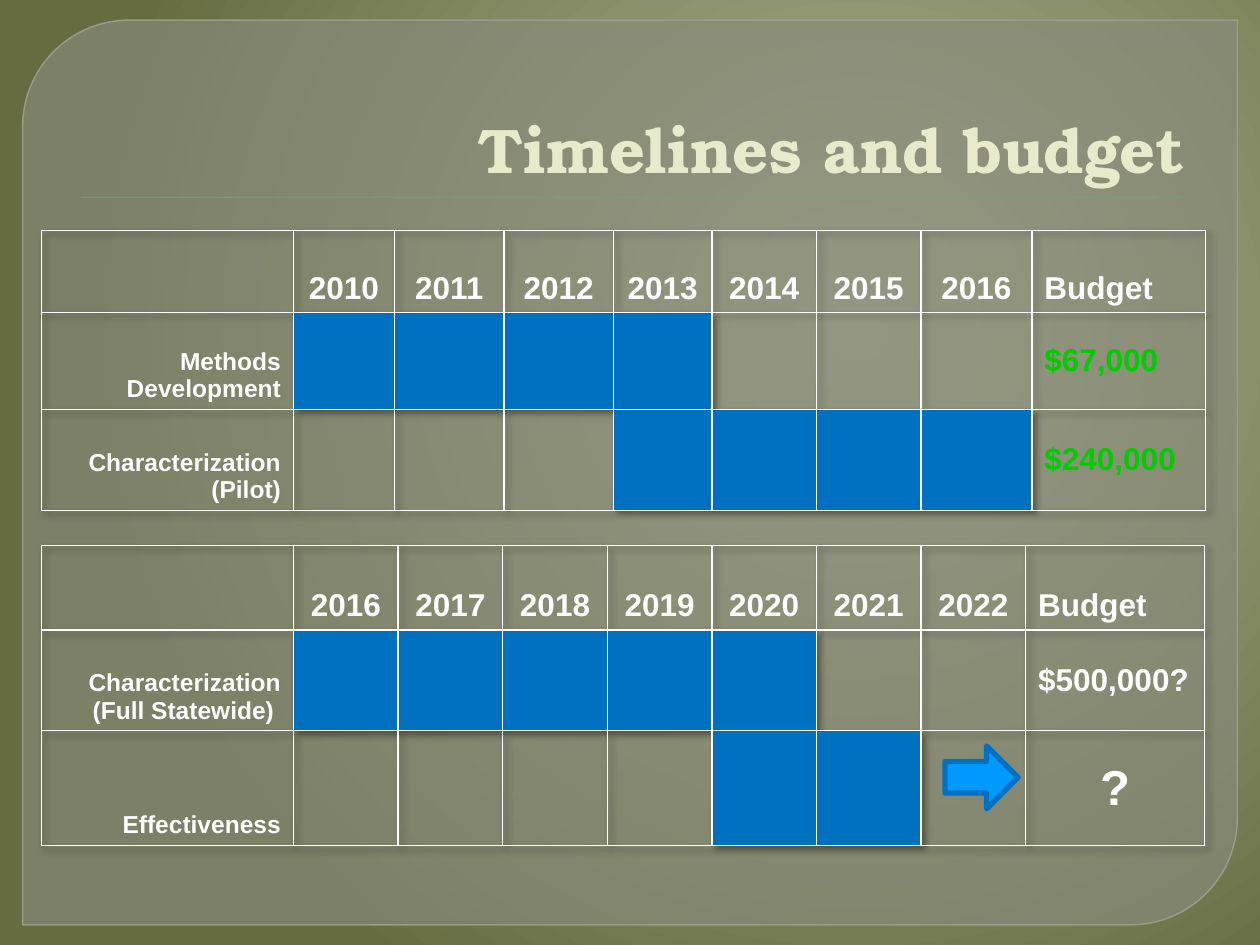
from dataclasses import dataclass

from lxml.etree import SubElement
from pptx import Presentation
from pptx.dml.color import RGBColor
from pptx.enum.shapes import MSO_SHAPE
from pptx.enum.text import MSO_ANCHOR, MSO_AUTO_SIZE, PP_ALIGN
from pptx.oxml import parse_xml
from pptx.oxml.ns import nsdecls, qn
from pptx.shapes.autoshape import Shape
from pptx.slide import Slide
from pptx.table import _Cell
from pptx.util import Inches, Pt


@dataclass(frozen=True)
class Theme:
    glow: tuple[tuple[int, str], ...] = ((0, "A9AE8D"), (20, "9FA583"), (100, "666C40"))
    panel: str = "888B7B"
    panel_line: str = "9DA090"
    rule: str = "72A376"
    title: str = "E7EACB"
    text: str = "FFFFFF"
    funded: str = "00CC00"
    bar: str = "0070C0"
    arrow: str = "0099FF"
    shadow: str = "000000"
    title_font: str = "TeX Gyre Bonum"
    body_font: str = "Arial"
    title_size: int = 36
    body_size: int = 18
    label_size: int = 14
    question_size: int = 28


THEME = Theme()


@dataclass(frozen=True)
class Phase:
    label: str
    start: int
    end: int
    budget: str
    color: str = THEME.text
    size: int = THEME.body_size
    align: PP_ALIGN = PP_ALIGN.LEFT


@dataclass(frozen=True)
class Timeline:
    top: float
    first_year: int
    columns: list[float]
    rows: list[float]
    phases: list[Phase]


TIMELINES = [
    Timeline(
        1.83, 2010,
        [2, 0.8, 0.87, 0.87, 0.78, 0.83, 0.83, 0.88, 1.38],
        [0.65, 0.77, 0.8],
        [
            Phase("Methods Development", 2010, 2013, "$67,000", THEME.funded),
            Phase("Characterization (Pilot)", 2013, 2016, "$240,000", THEME.funded),
        ],
    ),
    Timeline(
        4.33, 2016,
        [2] + [0.83] * 7 + [1.42],
        [0.67, 0.8, 0.91],
        [
            Phase("Characterization (Full Statewide) ", 2016, 2020, "$500,000?"),
            Phase("Effectiveness", 2020, 2021, "?", size=THEME.question_size,
                  align=PP_ALIGN.CENTER),
        ],
    ),
]


def rgb(color: str) -> RGBColor:
    return RGBColor.from_string(color)


def shadow_effect(blur: float, distance: float, angle: int, opacity: int):
    return parse_xml(
        f'<a:effectLst {nsdecls("a")}><a:outerShdw blurRad="{Pt(blur)}" '
        f'dist="{Pt(distance)}" dir="{angle * 60000}" algn="tl" rotWithShape="0">'
        f'<a:srgbClr val="{THEME.shadow}"><a:alpha val="{opacity * 1000}"/></a:srgbClr>'
        f'</a:outerShdw></a:effectLst>'
    )


def paint_background(slide: Slide) -> None:
    stops = "".join(
        f'<a:gs pos="{position * 1000}"><a:srgbClr val="{color}"/></a:gs>'
        for position, color in THEME.glow
    )
    slide.element.cSld.insert(0, parse_xml(
        f'<p:bg {nsdecls("p", "a")}><p:bgPr><a:gradFill rotWithShape="1">'
        f'<a:gsLst>{stops}</a:gsLst><a:path path="circle">'
        f'<a:fillToRect l="68000" t="35000" r="32000" b="65000"/></a:path>'
        f'</a:gradFill><a:effectLst/></p:bgPr></p:bg>'
    ))


def add_block(slide: Slide, kind: MSO_SHAPE, bounds: tuple[float, ...], fill: str,
              line: str | None = None, width: float = 0) -> Shape:
    block = slide.shapes.add_shape(kind, *map(Inches, bounds))
    block.shadow.inherit = False
    block.fill.solid()
    block.fill.fore_color.rgb = rgb(fill)
    if line:
        block.line.color.rgb = rgb(line)
        block.line.width = Pt(width)
    else:
        block.line.fill.background()
    return block


def add_panel(slide: Slide) -> None:
    panel = add_block(slide, MSO_SHAPE.ROUND_2_DIAG_RECTANGLE, (0.18, 0.16, 9.64, 7.18),
                      THEME.panel, THEME.panel_line, 0.87)
    panel.adjustments[0] = 0.118
    panel.adjustments[1] = 0
    colors = panel.element.spPr.iter(qn("a:srgbClr"))
    for color, opacity in zip(list(colors), (65, 88)):
        SubElement(color, qn("a:alpha")).set("val", str(opacity * 1000))

    rule = add_block(slide, MSO_SHAPE.RECTANGLE, (0.64, 1.56, 8.75, 0.01), THEME.rule)
    properties = rule.element.spPr
    properties.replace(properties.find(qn("a:effectLst")), shadow_effect(1, 1, 90, 75))


def place_title(slide: Slide, text: str) -> None:
    title = slide.shapes.title
    title.left, title.top, title.width, title.height = map(Inches, (0.5, 0.28, 9, 1.25))
    frame = title.text_frame
    frame.text = text
    frame.auto_size = MSO_AUTO_SIZE.NONE
    frame.vertical_anchor = MSO_ANCHOR.BOTTOM
    para = frame.paragraphs[0]
    para.alignment = PP_ALIGN.RIGHT
    font = para.runs[0].font
    font.name, font.size, font.bold = THEME.title_font, Pt(THEME.title_size), True
    font.color.rgb = rgb(THEME.title)
    slide.shapes._spTree.append(title.element)


def write_cell(cell: _Cell, text: str, align: PP_ALIGN, size: int = THEME.body_size,
               color: str = THEME.text, anchor: MSO_ANCHOR = MSO_ANCHOR.BOTTOM) -> None:
    cell.text = text
    cell.vertical_anchor = anchor
    para = cell.text_frame.paragraphs[0]
    para.alignment = align
    font = para.runs[0].font
    font.name, font.size, font.bold = THEME.body_font, Pt(size), True
    font.color.rgb = rgb(color)


def add_borders(cell: _Cell) -> None:
    properties = cell._tc.get_or_add_tcPr()
    for index, side in enumerate(("lnL", "lnR", "lnT", "lnB")):
        properties.insert(index, parse_xml(
            f'<a:{side} {nsdecls("a")} w="{Pt(1)}"><a:solidFill>'
            f'<a:srgbClr val="{THEME.text}"/></a:solidFill></a:{side}>'
        ))


def add_timeline(slide: Slide, timeline: Timeline) -> None:
    columns, rows = timeline.columns, timeline.rows
    frame = slide.shapes.add_table(
        len(rows), len(columns), Inches(0.33), Inches(timeline.top),
        Inches(sum(columns)), Inches(sum(rows)),
    )
    table = frame.table
    table.first_row = table.horz_banding = False
    table._tbl.tblPr.insert(0, shadow_effect(4, 3, 45, 40))
    for column, width in zip(table.columns, columns):
        column.width = Inches(width)
    for row, height in zip(table.rows, rows):
        row.height = Inches(height)
    for cell in table.iter_cells():
        cell.fill.background()
        add_borders(cell)

    last = len(columns) - 1
    for column in range(1, last):
        year = str(timeline.first_year + column - 1)
        write_cell(table.cell(0, column), year, PP_ALIGN.CENTER)
    write_cell(table.cell(0, last), "Budget", PP_ALIGN.LEFT)

    for row, phase in enumerate(timeline.phases, start=1):
        write_cell(table.cell(row, 0), phase.label, PP_ALIGN.RIGHT, THEME.label_size)
        for year in range(phase.start, phase.end + 1):
            fill = table.cell(row, year - timeline.first_year + 1).fill
            fill.solid()
            fill.fore_color.rgb = rgb(THEME.bar)
        write_cell(table.cell(row, last), phase.budget, phase.align, phase.size,
                   phase.color, MSO_ANCHOR.MIDDLE)


def main() -> None:
    deck = Presentation()
    deck.slide_width, deck.slide_height = Inches(10), Inches(7.5)
    slide = deck.slides.add_slide(deck.slide_layouts[5])
    paint_background(slide)
    add_panel(slide)
    place_title(slide, "Timelines and budget")
    for timeline in TIMELINES:
        add_timeline(slide, timeline)
    add_block(slide, MSO_SHAPE.RIGHT_ARROW, (7.5, 5.92, 0.58, 0.5),
              THEME.arrow, THEME.bar, 3)
    deck.save("out.pptx")


if __name__ == "__main__":
    main()
